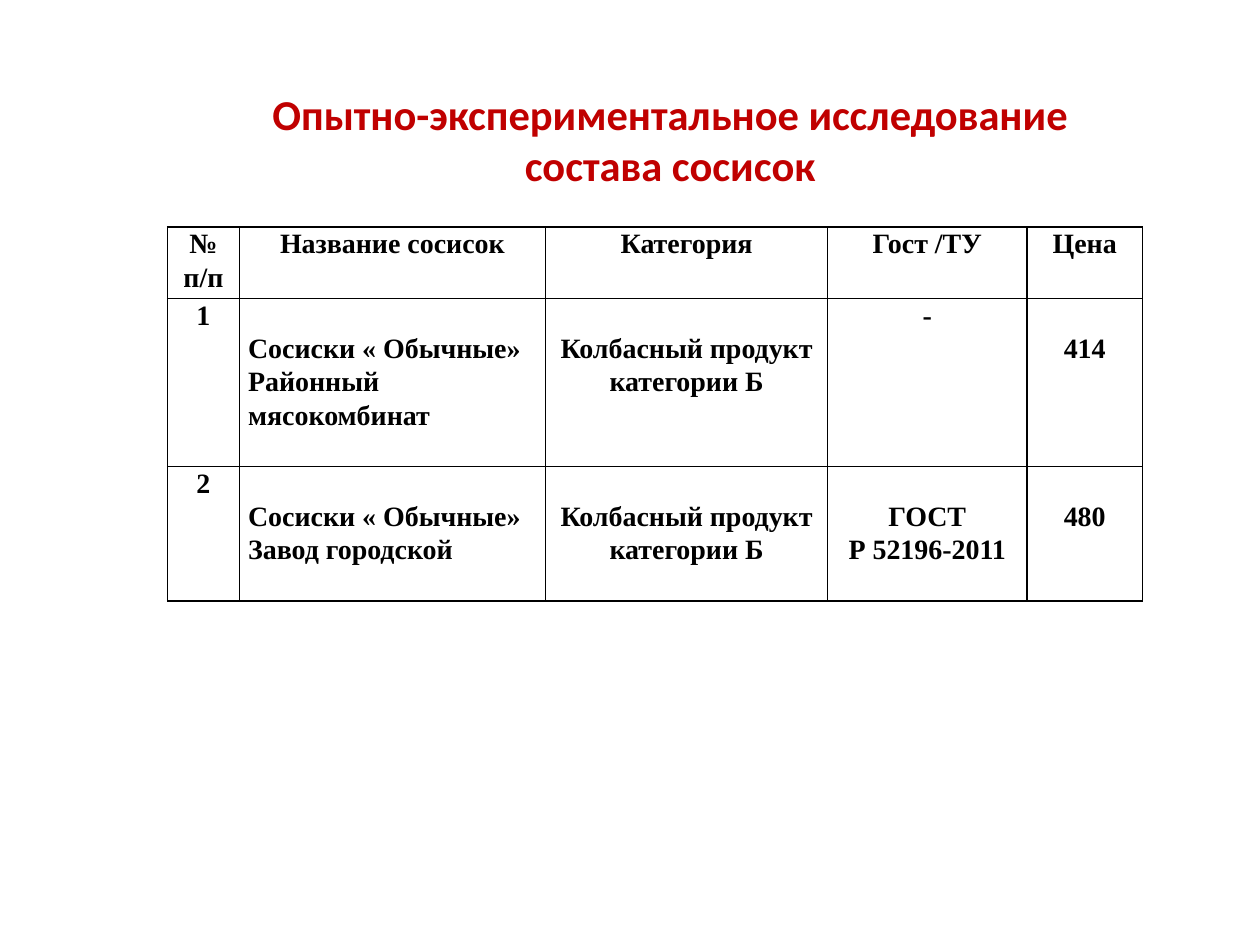
import pptx
import pptx.util
import pptx.dml.color
import pptx.enum.text
import lxml.etree

Inch, Pt = pptx.util.Inches, pptx.util.Pt
Align = pptx.enum.text.PP_ALIGN
Anchor = pptx.enum.text.MSO_ANCHOR
INK, RED = "000000", "C00000"
NS = "http://schemas.openxmlformats.org/drawingml/2006/main"


def style(para, face, size, tint, align):
    para.alignment = align
    font = para.font
    font.name, font.size, font.bold = face, Pt(size), True
    font.color.rgb = pptx.dml.color.RGBColor.from_string(tint)


def border(cell):
    props = cell._tc.get_or_add_tcPr()
    for i, side in enumerate(("lnL", "lnR", "lnT", "lnB")):
        line = lxml.etree.Element(f"{{{NS}}}{side}", w=str(Pt(1)))
        fill = lxml.etree.SubElement(line, f"{{{NS}}}solidFill")
        lxml.etree.SubElement(fill, f"{{{NS}}}srgbClr", val=INK)
        props.insert(i, line)


deck = pptx.Presentation()
deck.slide_width, deck.slide_height = Inch(10), Inch(7.5)
slide = deck.slides.add_slide(deck.slide_layouts[6])

# Title, held in the upper part of its box
box = slide.shapes.add_textbox(Inch(0.86), Inch(0.78), Inch(9), Inch(1.25))
frame = box.text_frame
frame.word_wrap = True
frame.vertical_anchor = Anchor.MIDDLE
frame.margin_top, frame.margin_bottom = 0, Inch(0.6)
frame.margin_right = Inch(0.18)
frame.text = "Опытно-экспериментальное исследование\vсостава сосисок"
style(frame.paragraphs[0], "Calibri", 24.3, RED, Align.CENTER)

# Table: column widths, row heights and text
cols = [0.57, 2.43, 2.24, 1.58, 0.92]
rows = [0.52, 1.33, 1.07]
kind = "Колбасный продукт категории Б"
data = [
    ["№ п/п", "Название сосисок", "Категория", "Гост /ТУ", "Цена"],
    ["1", "Сосиски « Обычные»\nРайонный мясокомбинат", kind, "-", "414"],
    ["2", "Сосиски « Обычные»\nЗавод городской", kind,
     "ГОСТ\nР 52196-2011", "480"],
]
grid = slide.shapes.add_table(
    len(rows), len(cols), Inch(1.33), Inch(1.8), Inch(sum(cols)), Inch(sum(rows))
).table
grid.first_row = grid.horz_banding = False
for col, width in zip(grid.columns, cols):
    col.width = Inch(width)
for row, height in zip(grid.rows, rows):
    row.height = Inch(height)

# Body cells start one line down, except the number and the dash
for r, texts in enumerate(data):
    for c, text in enumerate(texts):
        cell = grid.cell(r, c)
        cell.fill.background()
        border(cell)
        cell.margin_left = cell.margin_right = Inch(0.07)
        cell.margin_bottom = 0
        cell.margin_top = Inch(0.26) if r and c and text != "-" else 0
        cell.vertical_anchor = Anchor.TOP
        cell.text = text
        align = Align.LEFT if r and c == 1 else Align.CENTER
        for para in cell.text_frame.paragraphs:
            style(para, "Times New Roman", 16, INK, align)
            para.line_spacing = 1.07

deck.save("out.pptx")
